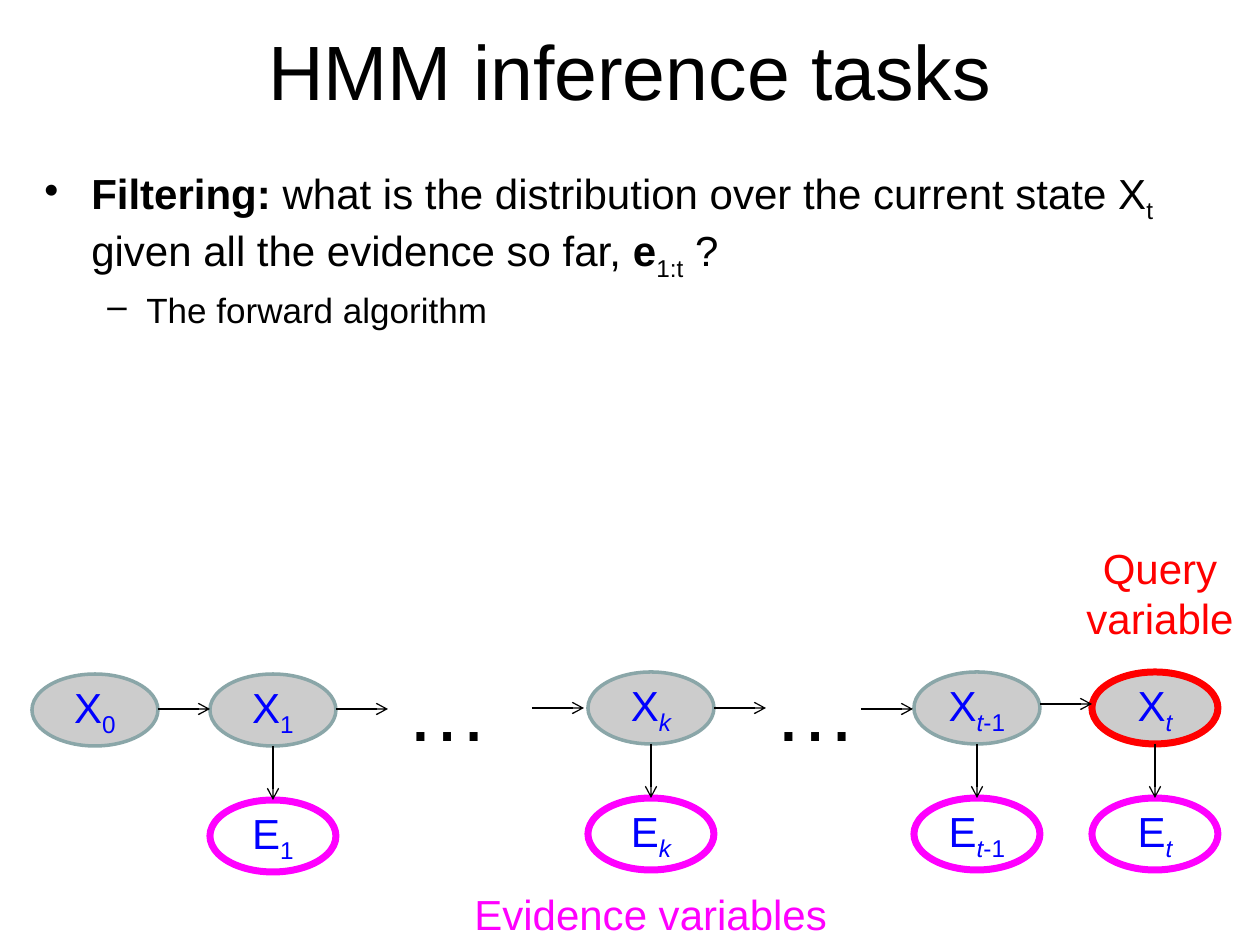
from lxml import etree
from pptx import Presentation
from pptx.dml.color import RGBColor
from pptx.enum.shapes import MSO_CONNECTOR, MSO_SHAPE
from pptx.enum.text import MSO_ANCHOR, MSO_AUTO_SIZE, PP_ALIGN
from pptx.oxml.ns import qn
from pptx.util import Emu, Pt

PX = 914400 / 126
BLACK = RGBColor(0x00, 0x00, 0x00)
BLUE = RGBColor(0x00, 0x00, 0xFF)
RED = RGBColor(0xFF, 0x00, 0x00)
MAGENTA = RGBColor(0xFF, 0x00, 0xFF)
GREY = RGBColor(0xCC, 0xCC, 0xCC)
TEAL = RGBColor(0x8A, 0xA6, 0xA8)
LEFT, CENTER = PP_ALIGN.LEFT, PP_ALIGN.CENTER
MIDDLE = MSO_ANCHOR.MIDDLE
FIT_SHAPE = MSO_AUTO_SIZE.SHAPE_TO_FIT_TEXT
ELLIPSE = MSO_SHAPE.OVAL
STRAIGHT = MSO_CONNECTOR.STRAIGHT

NODE_WIDTH, NODE_HEIGHT = 126, 72
EVIDENCE_DROP = 126


def px(*lengths):
    return [Emu(round(length * PX)) for length in lengths]


class SlideBuilder:
    font_name = "Arial"

    def __init__(self, page):
        self.page = page

    def fill_para(self, para, spans, size, color, align=LEFT):
        """Write (text, style) spans; style letters: b bold, i italic, s subscript."""
        para.alignment = align
        para.font.name = self.font_name
        para.font.size = Pt(size)
        para.font.color.rgb = color
        for text, style in spans:
            span = para.add_run()
            span.text = text
            if "b" in style:
                span.font.bold = True
            if "i" in style:
                span.font.italic = True
            if "s" in style:
                span._r.get_or_add_rPr().set("baseline", "-25000")

    def title(self, text, left, top, width, height):
        box = self.page.shapes.title
        box.left, box.top, box.width, box.height = px(left, top, width, height)
        box.text_frame.vertical_anchor = MIDDLE
        self.fill_para(box.text_frame.paragraphs[0], [(text, "")], 44, BLACK, CENTER)

    def bullets(self, items, left, top, width, height):
        """Each item is (spans, size, bullet, margin, hanging, space before)."""
        frame = self.page.shapes.add_textbox(*px(left, top, width, height)).text_frame
        frame.word_wrap = True
        for index, (spans, size, bullet, margin, hanging, space) in enumerate(items):
            para = frame.add_paragraph() if index else frame.paragraphs[0]
            para.level = index
            properties = para._p.get_or_add_pPr()
            margin_emu, hanging_emu = px(margin, hanging)
            properties.set("marL", str(margin_emu))
            properties.set("indent", str(-hanging_emu))
            etree.SubElement(properties, qn("a:buChar")).set("char", bullet)
            if space:
                para.space_before = Pt(space)
            self.fill_para(para, spans, size, BLACK)

    def label(self, text, left, top, width, height, size, color, align=LEFT, wrap=False):
        frame = self.page.shapes.add_textbox(*px(left, top, width, height)).text_frame
        frame.word_wrap = wrap
        frame.auto_size = FIT_SHAPE
        self.fill_para(frame.paragraphs[0], [(text, "")], size, color, align)

    def node(self, letter, subscript, left, top, line, weight, fill=None):
        shape = self.page.shapes.add_shape(ELLIPSE, *px(left, top, NODE_WIDTH, NODE_HEIGHT))
        shape.shadow.inherit = False
        if fill is None:
            shape.fill.background()
        else:
            shape.fill.solid()
            shape.fill.fore_color.rgb = fill
        shape.line.color.rgb = line
        shape.line.width = Pt(weight)
        frame = shape.text_frame
        frame.word_wrap = False
        frame.vertical_anchor = MIDDLE
        self.fill_para(frame.paragraphs[0], [(letter, "")] + subscript, 24, BLUE, CENTER)

    def arrow(self, start_x, start_y, end_x, end_y):
        line = self.page.shapes.add_connector(STRAIGHT, *px(start_x, start_y, end_x, end_y))
        line.line.color.rgb = BLACK
        line.line.width = Pt(0.75)
        etree.SubElement(line.line._get_or_add_ln(), qn("a:tailEnd")).set("type", "arrow")
        etree.SubElement(line._element.spPr, qn("a:effectLst"))


def main():
    deck = Presentation()
    deck.slide_width, deck.slide_height = px(1260, 945)
    page = deck.slides.add_slide(deck.slide_layouts[5])
    builder = SlideBuilder(page)

    builder.title("HMM inference tasks", 63, 10, 1134, 120)
    question = [
        ("Filtering: ", "b"),
        ("what is the distribution over the current state X", ""),
        ("t", "s"),
        (" given all the evidence so far, ", ""),
        ("e", "b"),
        ("1:t", "s"),
        (" ?", ""),
    ]
    builder.bullets(
        [
            (question, 24, "•", 47, 47, 0),
            ([("The forward algorithm", "")], 20, "–", 102, 39, 4),
        ],
        32, 161, 1197, 683,
    )

    # Subscript, left, top, state outline, outline weight
    states = [
        ([("0", "s")], 32, 674, TEAL, 2),
        ([("1", "s")], 210, 674, TEAL, 2),
        ([("k", "is")], 588, 672, TEAL, 2),
        ([("t", "is"), ("-1", "s")], 914, 672, TEAL, 2),
        ([("t", "is")], 1092, 672, RED, 4),
    ]
    for index, (subscript, left, top, outline, weight) in enumerate(states):
        builder.node("X", subscript, left, top, outline, weight, GREY)
        if index:
            evidence_top = top + EVIDENCE_DROP
            center = left + NODE_WIDTH // 2
            builder.node("E", subscript, left, evidence_top, MAGENTA, 4)
            builder.arrow(center, top + NODE_HEIGHT, center, evidence_top)

    for start, y in [(158, 709), (336, 709), (532, 708), (714, 708), (861, 709), (1040, 704)]:
        builder.arrow(start, y, start + 52, y)

    for left in (393, 761):
        builder.label("…", left, 651, 111, 115, 48, BLACK)
    builder.label("Query variable", 1070, 536, 180, 115, 24, RED, CENTER, wrap=True)
    builder.label("Evidence variables", 462, 882, 382, 63, 24, MAGENTA)

    deck.save("out.pptx")


if __name__ == "__main__":
    main()
